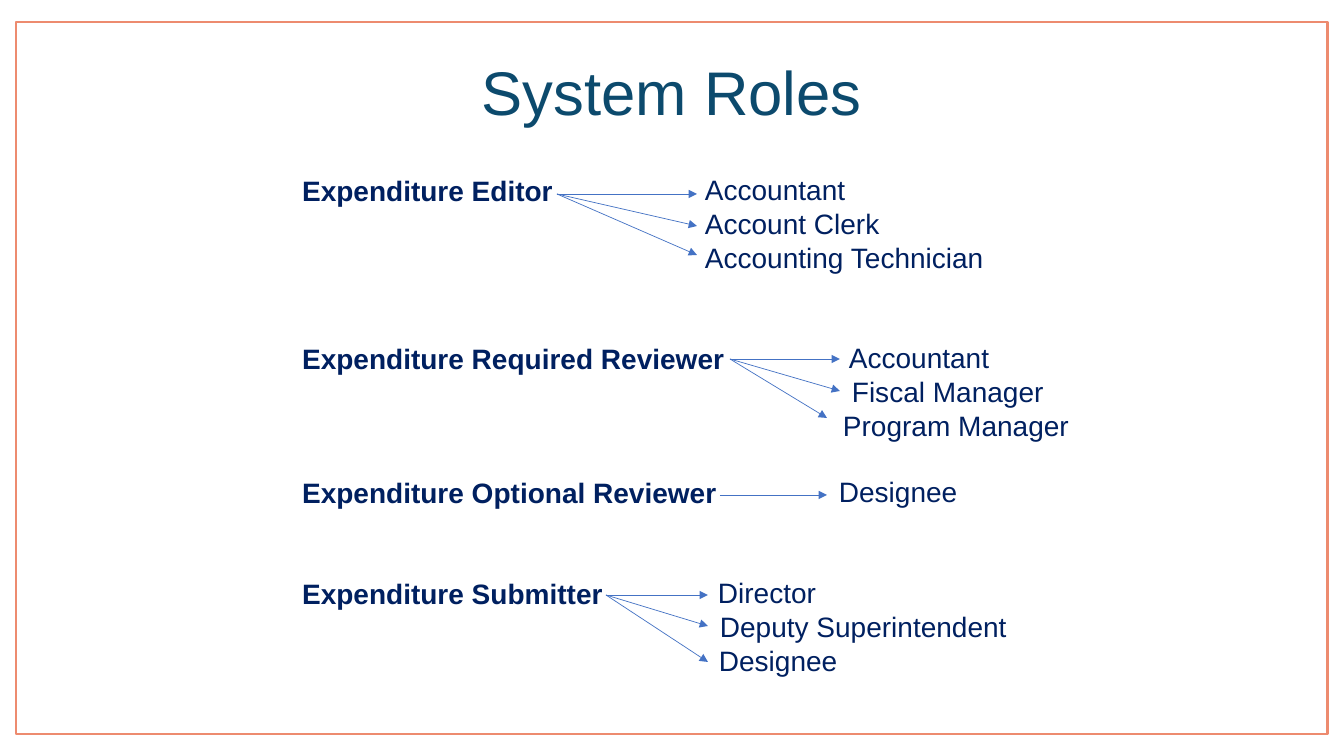
from lxml import etree
from pptx import Presentation
from pptx.dml.color import RGBColor
from pptx.enum.shapes import MSO_CONNECTOR, MSO_SHAPE
from pptx.enum.text import MSO_ANCHOR, MSO_AUTO_SIZE, PP_ALIGN
from pptx.oxml.ns import qn
from pptx.util import Emu, Pt

RECT = MSO_SHAPE.RECTANGLE
LINE = MSO_CONNECTOR.STRAIGHT
MIDDLE, TOP = MSO_ANCHOR.MIDDLE, MSO_ANCHOR.TOP
CENTER, LEFT = PP_ALIGN.CENTER, PP_ALIGN.LEFT
FIXED = MSO_AUTO_SIZE.NONE

CORAL = RGBColor(0xED, 0x8B, 0x6F)
TEAL = RGBColor(0x0C, 0x4A, 0x6D)
NAVY = RGBColor(0x00, 0x20, 0x60)
BLUE = RGBColor(0x44, 0x72, 0xC4)

FRAME = (16, 22, 1312, 712)
HEAD = (17, 23, 1310, 146)
BODY = (292, 168, 450, 553)
WIDE = 320
INSET = 10
PITCH = 24
STEP = 33.6

ROLES = [
    ("Expenditure Editor", 0, (557, 194), [
        ("Accountant", 705, (697, 194)),
        ("Account Clerk", 705, (697, 226)),
        ("Accounting Technician", 705, (697, 255))]),
    ("Expenditure Required Reviewer", 5, (730, 359), [
        ("Accountant", 849, (840, 359)),
        ("Fiscal Manager", 852, (840, 391)),
        ("Program Manager", 843, (827, 418))]),
    ("Expenditure Optional Reviewer", 9, (720, 495), [
        ("Designee", 839, (827, 495))]),
    ("Expenditure Submitter", 12, (606, 595), [
        ("Director", 718, (708, 595)),
        ("Deputy Superintendent", 720, (708, 626)),
        ("Designee", 719, (708, 662))]),
]


def px(n):
    """Turn pixels into EMU."""
    return Emu(round(n * 9144000 / 1008))


class Deck:
    """Holds the style and the current slide."""

    font = "Arial"

    def __init__(self):
        self.show = Presentation()
        self.show.slide_width, self.show.slide_height = px(1344), px(756)
        self.slide = self.show.slides.add_slide(self.show.slide_layouts[1])

    def place(self, shape, box, anchor):
        shape.left, shape.top, shape.width, shape.height = map(px, box)
        frame = shape.text_frame
        frame.auto_size = FIXED
        frame.word_wrap = True
        frame.vertical_anchor = anchor
        return frame

    def style(self, para, size, color, bold=False):
        para.font.name = self.font
        para.font.size = Pt(size)
        para.font.bold = bold
        para.font.color.rgb = color

    def frame(self, box, color, width):
        shape = self.slide.shapes.add_shape(RECT, *map(px, box))
        shape.shadow.inherit = False
        shape.fill.background()
        shape.line.color.rgb = color
        shape.line.width = Pt(width)

    def title(self, text, box):
        para = self.place(self.slide.shapes.title, box, MIDDLE).paragraphs[0]
        para.text = text
        para.alignment = CENTER
        para.line_spacing = 0.9
        self.style(para, 44, TEAL)

    def rows(self, frame, items, bold):
        for i, (text, gap, left) in enumerate(items):
            para = frame.add_paragraph() if i else frame.paragraphs[0]
            para.text = text
            para.alignment = LEFT
            para.line_spacing = Pt(PITCH)
            para.space_before = Pt(gap * PITCH)
            para.space_after = Pt(0)
            props = para._p.get_or_add_pPr()
            props.set("marL", str(px(left)))
            props.set("indent", "0")
            etree.SubElement(props, qn("a:buNone"))
            self.style(para, 20, NAVY, bold)

    def labels(self, roles, box):
        items, last = [], -1
        for label, row, *_ in roles:
            items.append((label, row - last - 1, 0))
            last = row
        body = self.place(self.slide.placeholders[1], box, TOP)
        self.rows(body, items, True)

    def names(self, row, names):
        edge = min(left for _, left, _ in names)
        top = round(BODY[1] + row * STEP)
        box = (edge - INSET, top, WIDE, round(len(names) * STEP) + INSET)
        shape = self.slide.shapes.add_textbox(*map(px, box))
        items = [(name, 0, left - edge) for name, left, _ in names]
        self.rows(self.place(shape, box, TOP), items, False)

    def arrow(self, start, tip):
        shape = self.slide.shapes.add_connector(LINE, *map(px, start + tip))
        shape.line.color.rgb = BLUE
        shape.line.width = Pt(0.5)
        etree.SubElement(shape.line._get_or_add_ln(), qn("a:tailEnd"), type="triangle")
        etree.SubElement(shape._element.spPr, qn("a:effectLst"))


def main():
    deck = Deck()
    deck.frame(FRAME, CORAL, 2)
    deck.title("System Roles", HEAD)
    deck.labels(ROLES, BODY)
    for _, row, start, names in ROLES:
        deck.names(row, names)
        for *_, tip in names:
            deck.arrow(start, tip)
    deck.show.save("out.pptx")


if __name__ == "__main__":
    main()
